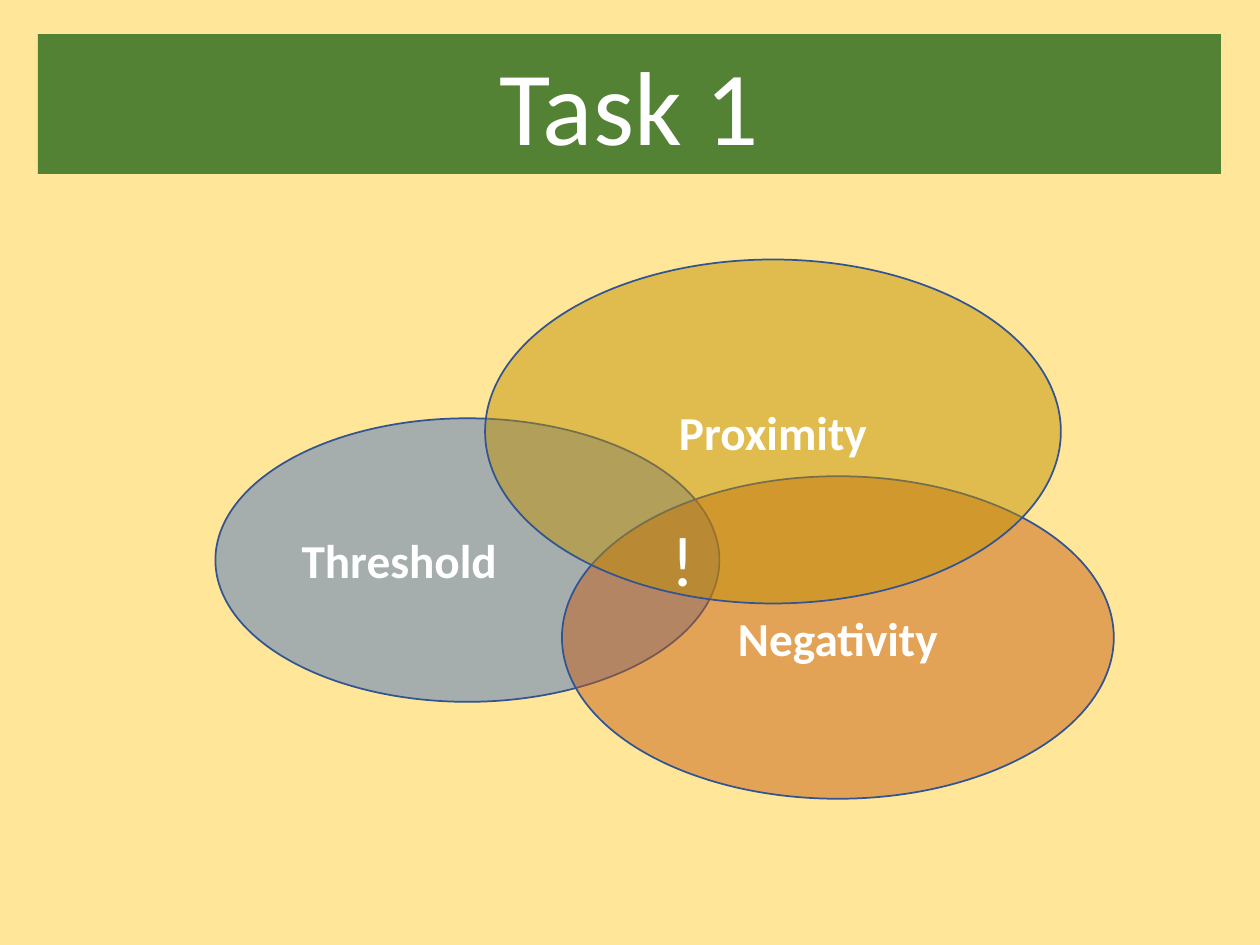
from dataclasses import dataclass

from lxml import etree
from pptx import Presentation
from pptx.dml.color import RGBColor
from pptx.enum.shapes import MSO_SHAPE
from pptx.enum.text import MSO_ANCHOR, MSO_AUTO_SIZE, PP_ALIGN
from pptx.oxml.ns import qn
from pptx.util import Inches, Pt

CREAM = RGBColor(0xFF, 0xE6, 0x99)
GREEN = RGBColor(0x54, 0x82, 0x35)
BLUE = RGBColor(0x44, 0x72, 0xC4)
ORANGE = RGBColor(0xC5, 0x5A, 0x11)
GOLD = RGBColor(0xBF, 0x90, 0x00)
OUTLINE = RGBColor(0x32, 0x54, 0x91)
WHITE = RGBColor(0xFF, 0xFF, 0xFF)

FONT = "Calibri"
OPACITY_PERCENT = 48
TITLE_ONLY_LAYOUT = 5
ELLIPSE = MSO_SHAPE.OVAL
LEFT, CENTER = PP_ALIGN.LEFT, PP_ALIGN.CENTER
TOP, MIDDLE = MSO_ANCHOR.TOP, MSO_ANCHOR.MIDDLE
FIT_SHAPE, FIXED = MSO_AUTO_SIZE.SHAPE_TO_FIT_TEXT, MSO_AUTO_SIZE.NONE


@dataclass(frozen=True)
class VennSet:
    label: str
    left: float
    top: float
    width: float
    height: float
    color: RGBColor
    align: PP_ALIGN = CENTER


VENN_SETS = (
    VennSet("Threshold", 1.71, 3.32, 4, 2.25, BLUE, LEFT),
    VennSet("Negativity", 4.46, 3.78, 4.38, 2.56, ORANGE),
    VennSet("Proximity", 3.85, 2.06, 4.57, 2.73, GOLD),
)


def write_text(shape, text: str, *, size: float, bold: bool = False,
               align: PP_ALIGN = LEFT, anchor: MSO_ANCHOR = TOP,
               auto_size: MSO_AUTO_SIZE = FIT_SHAPE) -> None:
    frame = shape.text_frame
    frame.word_wrap = True
    frame.auto_size = auto_size
    frame.vertical_anchor = anchor
    para = frame.paragraphs[0]
    para.alignment = align
    span = para.add_run()
    span.text = text
    span.font.name = FONT
    span.font.size = Pt(size)
    span.font.bold = bold
    span.font.color.rgb = WHITE


def set_opacity(shape, percent: int) -> None:
    color = shape.fill._xPr.find(qn("a:solidFill"))[0]
    etree.SubElement(color, qn("a:alpha"), val=str(percent * 1000))


def add_title(slide, text: str) -> None:
    title = slide.shapes.title
    title.left, title.top = Inches(0.3), Inches(0.27)
    title.width, title.height = Inches(9.39), Inches(1.11)
    title.fill.solid()
    title.fill.fore_color.rgb = GREEN
    write_text(title, text, size=60, align=CENTER)


def add_venn_set(slide, venn_set: VennSet) -> None:
    ellipse = slide.shapes.add_shape(
        ELLIPSE, Inches(venn_set.left), Inches(venn_set.top),
        Inches(venn_set.width), Inches(venn_set.height))
    ellipse.shadow.inherit = False
    ellipse.fill.solid()
    ellipse.fill.fore_color.rgb = venn_set.color
    set_opacity(ellipse, OPACITY_PERCENT)
    ellipse.line.color.rgb = OUTLINE
    ellipse.line.width = Pt(1)
    write_text(ellipse, venn_set.label, size=27, bold=True,
               align=venn_set.align, anchor=MIDDLE, auto_size=FIXED)


def main() -> None:
    deck = Presentation()
    deck.slide_width, deck.slide_height = Inches(10), Inches(7.5)
    slide = deck.slides.add_slide(deck.slide_layouts[TITLE_ONLY_LAYOUT])
    slide.background.fill.solid()
    slide.background.fill.fore_color.rgb = CREAM

    add_title(slide, "Task 1")
    for venn_set in VENN_SETS:
        add_venn_set(slide, venn_set)
    overlap_box = slide.shapes.add_textbox(
        Inches(5.23), Inches(4.04), Inches(0.84), Inches(0.78))
    write_text(overlap_box, "!", size=40.5)

    deck.save("out.pptx")


if __name__ == "__main__":
    main()
